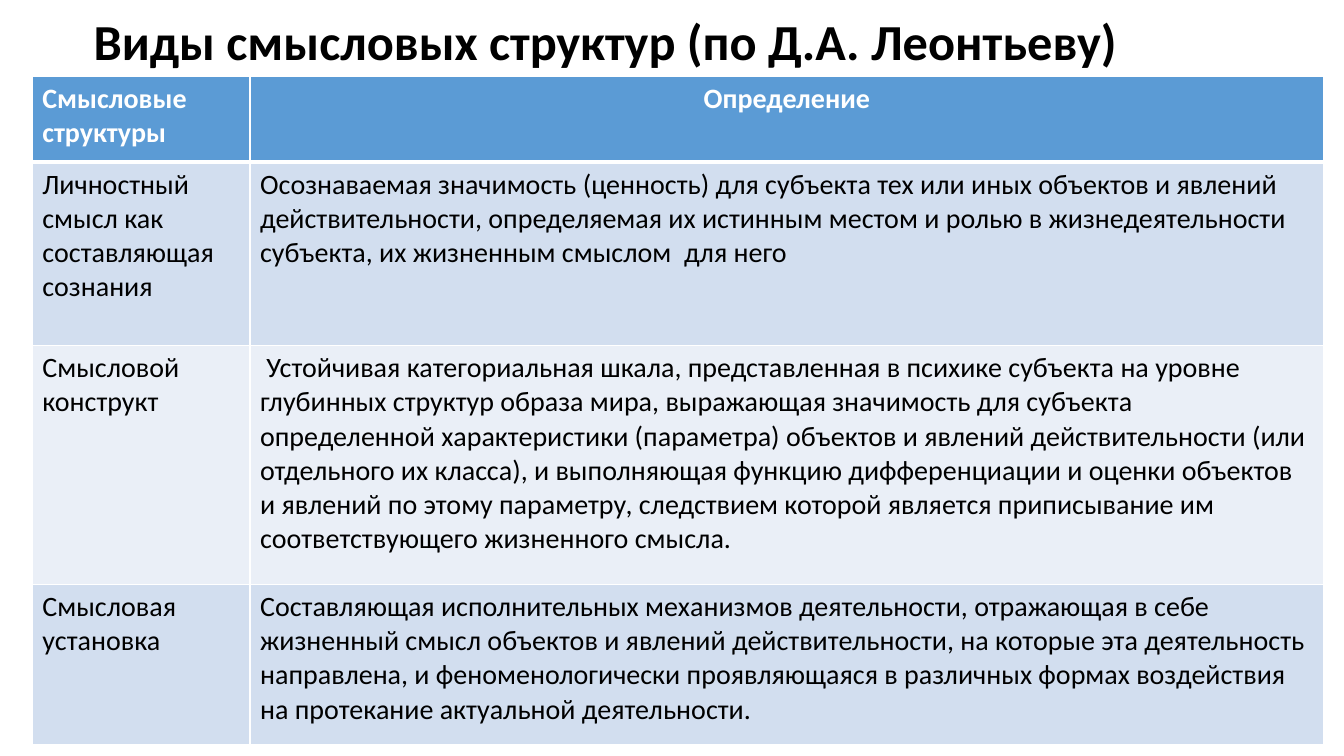
from lxml import etree
from pptx import Presentation
from pptx.dml.color import RGBColor
from pptx.enum.text import MSO_ANCHOR, PP_ALIGN
from pptx.oxml.ns import qn
from pptx.util import Pt

PX = 9144  # EMU per px, 100 px to the inch
LEFT, CENTER = PP_ALIGN.LEFT, PP_ALIGN.CENTER
MIDDLE = MSO_ANCHOR.MIDDLE

FONT = "Calibri"
BLACK = RGBColor(0x00, 0x00, 0x00)
WHITE = RGBColor(0xFF, 0xFF, 0xFF)
HEADER_BLUE = RGBColor(0x5B, 0x9B, 0xD5)
BANDS = (RGBColor(0xD2, 0xDE, 0xEF), RGBColor(0xEA, 0xEF, 0xF7))

TITLE = "Виды смысловых структур (по Д.А. Леонтьеву)"
COLUMNS = (216, 1065)
ROWS = (85, 182, 237, 159)
STRUCTURES = (
    ("Смысловые структуры", "Определение"),
    ("Личностный смысл как составляющая сознания",
     "Осознаваемая значимость (ценность) для субъекта тех или иных объектов "
     "и явлений действительности, определяемая их истинным местом и ролью "
     "в жизнедеятельности субъекта, их жизненным смыслом  для него"),
    ("Смысловой конструкт",
     " Устойчивая категориальная шкала, представленная в психике субъекта "
     "на уровне глубинных структур образа мира, выражающая значимость для "
     "субъекта определенной характеристики (параметра) объектов и явлений "
     "действительности (или отдельного их класса), и выполняющая функцию "
     "дифференциации и оценки объектов и явлений по этому параметру, "
     "следствием которой является приписывание им соответствующего "
     "жизненного смысла."),
    ("Смысловая установка",
     "Составляющая исполнительных механизмов деятельности, отражающая в себе "
     "жизненный смысл объектов и явлений действительности, на которые эта "
     "деятельность направлена, и феноменологически проявляющаяся в различных "
     "формах воздействия на протекание актуальной деятельности."),
)


def write(frame, text, size=20, color=BLACK, bold=False, align=LEFT, spacing=1.0):
    frame.word_wrap = True
    para = frame.paragraphs[0]
    para.alignment = align
    para.line_spacing = spacing
    span = para.add_run()
    span.text = text
    span.font.name = FONT
    span.font.size = Pt(size)
    span.font.bold = bold
    span.font.color.rgb = color


def set_borders(cell, color, **widths):
    """Draw cell edges; widths are points keyed L, R, T, B in schema order."""
    properties = cell._tc.get_or_add_tcPr()
    for side, width in widths.items():
        line = etree.SubElement(properties, qn(f"a:ln{side}"), w=str(Pt(width)))
        fill = etree.SubElement(line, qn("a:solidFill"))
        etree.SubElement(fill, qn("a:srgbClr"), val=str(color))


def add_title(page, left, top, width, height):
    box = page.shapes.add_textbox(left * PX, top * PX, width * PX, height * PX)
    box.text_frame.vertical_anchor = MIDDLE
    write(box.text_frame, TITLE, size=36, bold=True, spacing=0.9)


def add_structures_table(page, left, top):
    table = page.shapes.add_table(
        len(ROWS), len(COLUMNS), left * PX, top * PX,
        sum(COLUMNS) * PX, sum(ROWS) * PX).table
    for column, width in zip(table.columns, COLUMNS):
        column.width = width * PX
    for index, (row, height, texts) in enumerate(zip(table.rows, ROWS, STRUCTURES)):
        row.height = height * PX
        header = index == 0
        for column_index, (cell, text) in enumerate(zip(row.cells, texts)):
            # Thick rule between the header and the body
            set_borders(cell, WHITE, L=1, R=1, T=3 if index == 1 else 1,
                        B=3 if header else 1)
            cell.fill.solid()
            cell.fill.fore_color.rgb = HEADER_BLUE if header else BANDS[(index - 1) % 2]
            write(cell.text_frame, text, color=WHITE if header else BLACK, bold=header,
                  align=CENTER if header and column_index == 1 else LEFT)


def main():
    deck = Presentation()
    deck.slide_width, deck.slide_height = 1333 * PX, 750 * PX
    page = deck.slides.add_slide(deck.slide_layouts[6])
    add_title(page, 83, 17, 1150, 54)
    add_structures_table(page, 32, 76)
    deck.save("out.pptx")


if __name__ == "__main__":
    main()
